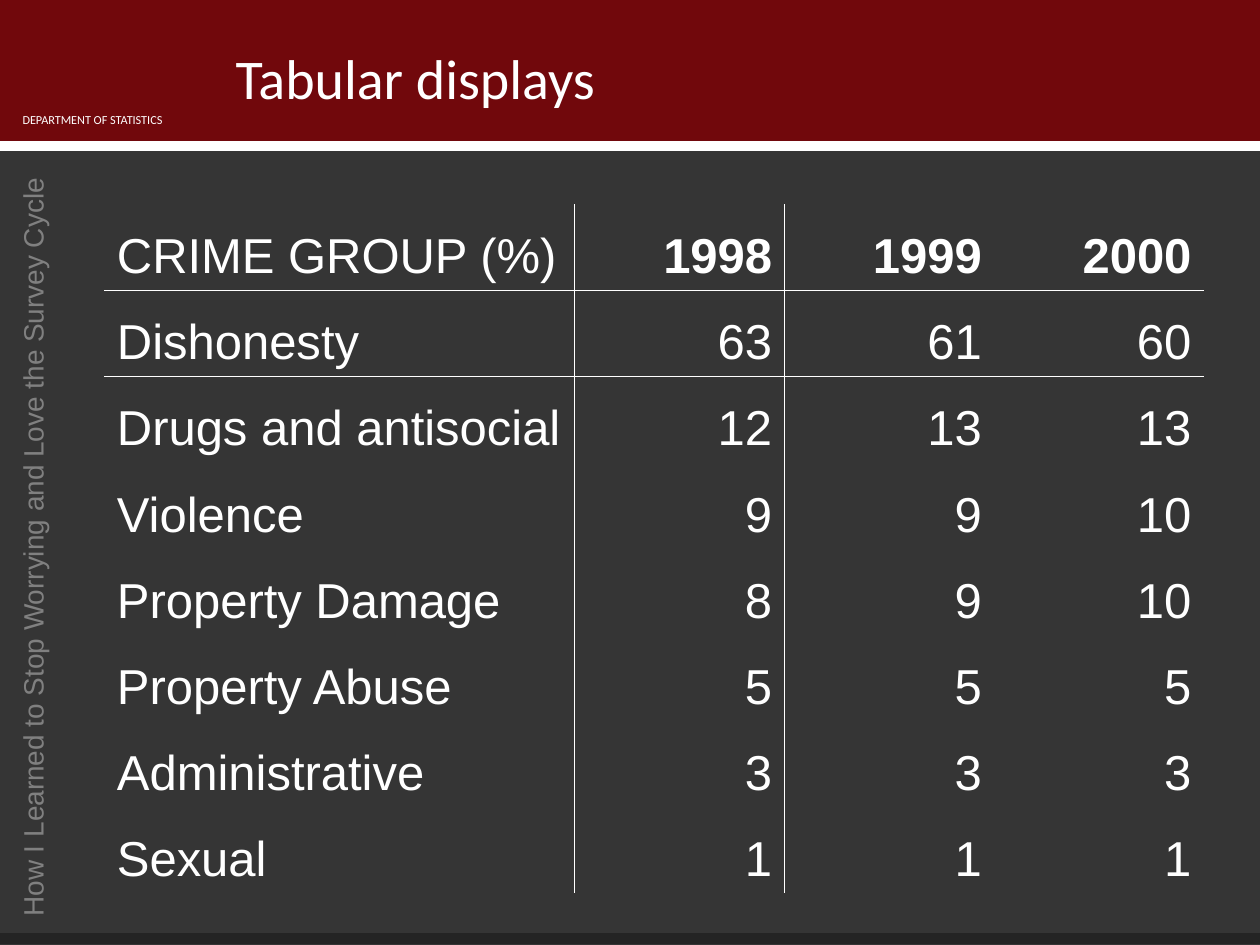
from dataclasses import dataclass

from lxml.etree import SubElement
from pptx import Presentation
from pptx.dml.color import RGBColor
from pptx.enum.shapes import MSO_CONNECTOR as Connector, MSO_SHAPE as Preset
from pptx.enum.text import MSO_ANCHOR as Anchor, MSO_AUTO_SIZE as AutoSize, PP_ALIGN as Align
from pptx.oxml.ns import qn
from pptx.util import Pt

WIDTH, HEIGHT = 720, 540
WHITE = "FFFFFF"
NO_GRID_STYLE = "{2D5ABB26-0587-4C30-8999-92F81FD0307C}"
HANGING = Pt(27)


@dataclass
class Band:
    top: float
    height: float
    color: str


@dataclass
class Rule:
    y: float
    color: str


@dataclass
class Label:
    text: str
    box: tuple[float, float, float, float]
    size: float
    font: str
    color: str
    align: Align = Align.LEFT
    rotation: float = 0


BANDS = [Band(85.7, 454.3, "353535"), Band(0, 83.5, "71080C")]
RULES = [Rule(83.5, WHITE), Rule(536.4, "242424")]
LABELS = [
    Label("How I Learned to Stop Worrying and Love the Survey Cycle",
          (-202.3, 302.4, 442, 26.6), 16, "Arial", "808080", Align.RIGHT, 270),
    Label("DEPARTMENT OF STATISTICS", (5.8, 60.5, 116, 15.8), 7, "Calibri", WHITE),
]
COLUMN_WIDTHS = [268.8, 120, 119.8, 119.8]
ROW_HEIGHT = 49.2
CRIME_ROWS = [
    ("CRIME GROUP (%)", 1998, 1999, 2000),
    ("Dishonesty", 63, 61, 60),
    ("Drugs and antisocial", 12, 13, 13),
    ("Violence", 9, 9, 10),
    ("Property Damage", 8, 9, 10),
    ("Property Abuse", 5, 5, 5),
    ("Administrative", 3, 3, 3),
    ("Sexual", 1, 1, 1),
]


def rgb(color: str) -> RGBColor:
    return RGBColor.from_string(color)


def apply(target, values: dict) -> None:
    for name, value in values.items():
        setattr(target, name, value)


def write(frame, text: str, size: float, font: str, color: str,
          align: Align = Align.LEFT, bold: bool = False):
    frame.text = text
    paragraph = frame.paragraphs[0]
    apply(paragraph, {"alignment": align, "space_before": Pt(0)})
    run = paragraph.runs[0]
    apply(run.font, {"size": Pt(size), "name": font, "bold": bold})
    run.font.color.rgb = rgb(color)
    return paragraph


def draw_band(slide, band: Band) -> None:
    shape = slide.shapes.add_shape(Preset.RECTANGLE, 0, Pt(band.top), Pt(WIDTH), Pt(band.height))
    shape.shadow.inherit = False
    shape.fill.solid()
    shape.fill.fore_color.rgb = rgb(band.color)
    shape.line.fill.background()


def draw_rule(slide, rule: Rule) -> None:
    connector = slide.shapes.add_connector(Connector.STRAIGHT, 0, Pt(rule.y), Pt(WIDTH), Pt(rule.y))
    connector.line.width = Pt(6)
    connector.line.color.rgb = rgb(rule.color)
    SubElement(connector._element.spPr, qn("a:effectLst"))


def draw_label(slide, label: Label) -> None:
    shape = slide.shapes.add_textbox(*map(Pt, label.box))
    shape.rotation = label.rotation
    apply(shape.text_frame, {"word_wrap": True, "auto_size": AutoSize.SHAPE_TO_FIT_TEXT})
    write(shape.text_frame, label.text, label.size, label.font, label.color, label.align)


def draw_title(slide, text: str) -> None:
    title = slide.shapes.title
    apply(title, {"left": Pt(127.4), "top": Pt(10), "width": Pt(592.6), "height": Pt(67.7)})
    title.text_frame.vertical_anchor = Anchor.MIDDLE
    write(title.text_frame, text, 32, "Calibri", WHITE)
    slide.shapes._spTree.append(title._element)


def draw_border(cell, side: str) -> None:
    line = SubElement(cell._tc.get_or_add_tcPr(), qn(f"a:ln{side}"), w=str(Pt(1)))
    fill = SubElement(line, qn("a:solidFill"))
    SubElement(fill, qn("a:srgbClr"), val=WHITE)


def draw_cell(cell, row: int, column: int, value) -> None:
    borders = {"L": column == 1, "R": column == 0, "T": row == 1, "B": row == 0}
    for side, visible in borders.items():
        if visible:
            draw_border(cell, side)
    cell.fill.background()
    cell.vertical_anchor = Anchor.BOTTOM
    align = Align.RIGHT if column else Align.LEFT
    paragraph = write(cell.text_frame, str(value), 28, "Arial", WHITE, align,
                      bold=row == 0 and column > 0)
    properties = paragraph._p.get_or_add_pPr()
    properties.set("marL", str(HANGING))
    properties.set("indent", str(-HANGING))


def draw_crime_table(slide) -> None:
    frame = slide.shapes.add_table(len(CRIME_ROWS), len(COLUMN_WIDTHS), Pt(59.6), Pt(116.8),
                                   Pt(sum(COLUMN_WIDTHS)), Pt(ROW_HEIGHT * len(CRIME_ROWS)))
    table = frame.table
    apply(table, {"first_row": False, "horz_banding": False})
    table._tbl.tblPr.find(qn("a:tableStyleId")).text = NO_GRID_STYLE
    for column, width in zip(table.columns, COLUMN_WIDTHS):
        column.width = Pt(width)
    for row, values in enumerate(CRIME_ROWS):
        table.rows[row].height = Pt(ROW_HEIGHT)
        for column, value in enumerate(values):
            draw_cell(table.cell(row, column), row, column, value)


def main() -> None:
    presentation = Presentation()
    apply(presentation, {"slide_width": Pt(WIDTH), "slide_height": Pt(HEIGHT)})
    slide = presentation.slides.add_slide(presentation.slide_layouts[5])
    for band in BANDS:
        draw_band(slide, band)
    for rule in RULES:
        draw_rule(slide, rule)
    for label in LABELS:
        draw_label(slide, label)
    draw_title(slide, "Tabular displays")
    draw_crime_table(slide)
    presentation.save("out.pptx")


if __name__ == "__main__":
    main()
